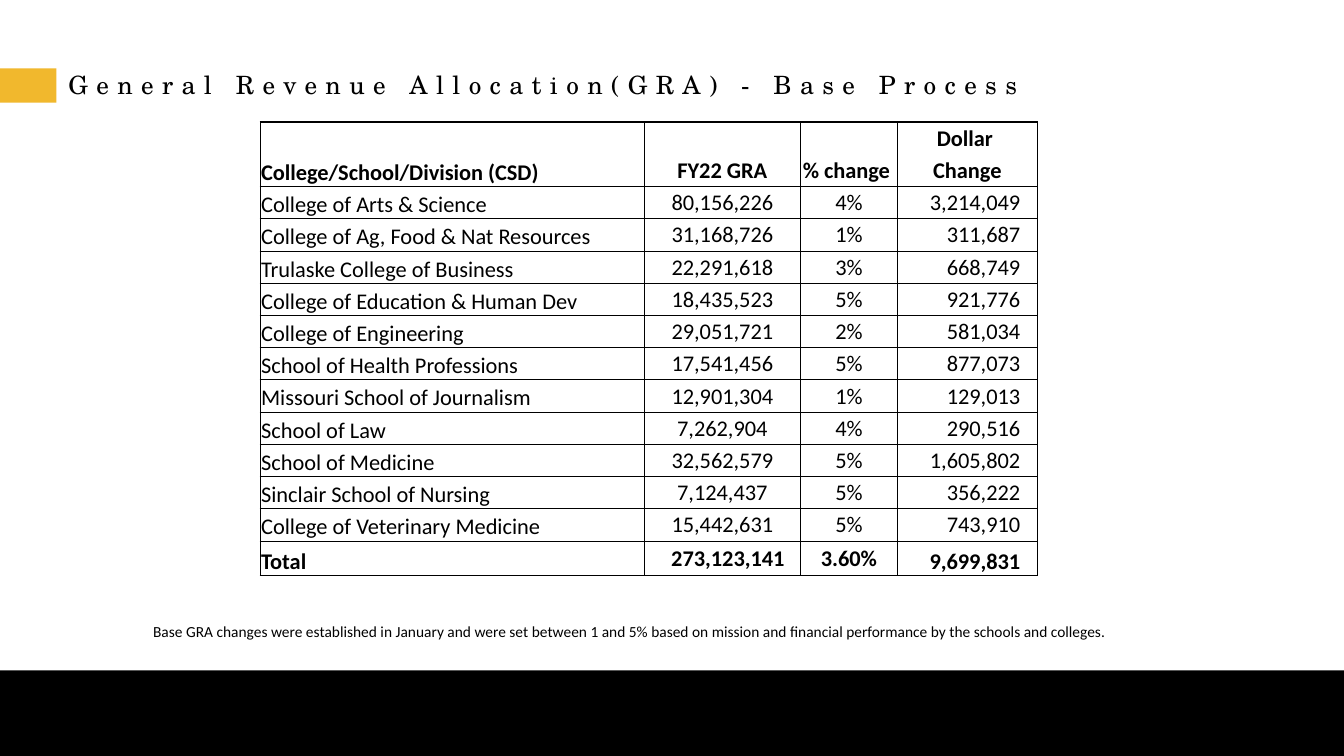
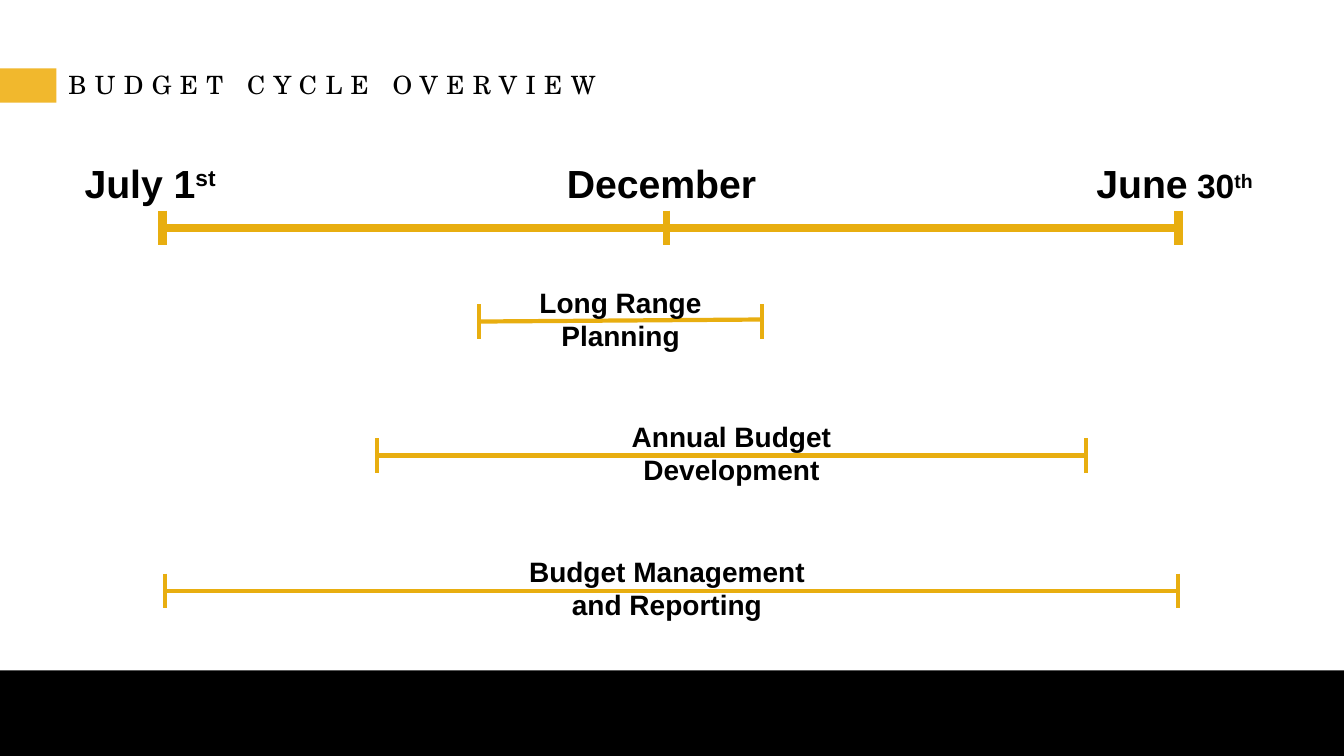
from lxml.etree import SubElement
from pptx import Presentation
from pptx.dml.color import RGBColor
from pptx.enum.shapes import MSO_CONNECTOR, MSO_SHAPE
from pptx.enum.text import MSO_ANCHOR, PP_ALIGN
from pptx.oxml import parse_xml
from pptx.oxml.ns import nsdecls, qn
from pptx.util import Inches, Pt

BLACK = "000000"
GOLD = "F1B82D"
LINE_GOLD = "E8AE10"
TITLE_FONT = "TeX Gyre Schola"
TABLE_FONT = "Calibri"
LABEL_FONT = "Arial"

COLUMNS = [3.81, 1.55, 0.96, 1.39]
ROWS = [
    ("", "", "", "Dollar"),
    ("College/School/Division (CSD)", "FY22 GRA", "% change", "Change"),
    ("College of Arts & Science", "80,156,226", "4%", "3,214,049"),
    ("College of Ag, Food & Nat Resources", "31,168,726", "1%", "311,687"),
    ("Trulaske College of Business", "22,291,618", "3%", "668,749"),
    ("College of Education & Human Dev", "18,435,523", "5%", "921,776"),
    ("College of Engineering", "29,051,721", "2%", "581,034"),
    ("School of Health Professions", "17,541,456", "5%", "877,073"),
    ("Missouri School of Journalism", "12,901,304", "1%", "129,013"),
    ("School of Law", "7,262,904", "4%", "290,516"),
    ("School of Medicine", "32,562,579", "5%", "1,605,802"),
    ("Sinclair School of Nursing", "7,124,437", "5%", "356,222"),
    ("College of Veterinary Medicine", "15,442,631", "5%", "743,910"),
    ("Total", "273,123,141", "3.60%", "9,699,831"),
]
HEADER_ROWS = 2


def color(value):
    return RGBColor.from_string(value)


def write(para, text, size=20, font=LABEL_FONT, bold=False, spacing=0, raised=False):
    span = para.add_run()
    span.text = text
    span.font.size = Pt(size)
    span.font.name = font
    span.font.bold = bold
    span.font.color.rgb = color(BLACK)
    properties = span.font._element
    if spacing:
        properties.set("spc", str(spacing * 100))
    if raised:
        properties.set("baseline", "30000")
    return span


def set_borders(cell, widths):
    properties = cell._tc.get_or_add_tcPr()
    for index, (side, width) in enumerate(zip("LRTB", widths)):
        fill = f'<a:solidFill><a:srgbClr val="{BLACK}"/></a:solidFill>' if width else "<a:noFill/>"
        border = parse_xml(f'<a:ln{side} {nsdecls("a")} w="{int(Pt(width))}">{fill}</a:ln{side}>')
        properties.insert(index, border)


class Slides:
    def __init__(self):
        self.deck = Presentation()
        self.deck.slide_width = Inches(13.33)
        self.deck.slide_height = Inches(7.5)
        self.page = None

    def new_page(self, title):
        self.page = self.deck.slides.add_slide(self.deck.slide_layouts[6])
        self.band(0, 6.65, 13.33, 0.85, BLACK)
        self.band(0, 0.68, 0.56, 0.34, GOLD)
        para, = self.text_box(0.58, 0.69, 12.14, 0.34, anchor=MSO_ANCHOR.MIDDLE)
        para.line_spacing = 0.9
        write(para, title, size=18, font=TITLE_FONT, spacing=6)

    def band(self, left, top, width, height, fill):
        shape = self.page.shapes.add_shape(
            MSO_SHAPE.RECTANGLE, Inches(left), Inches(top), Inches(width), Inches(height))
        shape.shadow.inherit = False
        shape.fill.solid()
        shape.fill.fore_color.rgb = color(fill)
        shape.line.fill.background()

    def text_box(self, left, top, width, height, align=PP_ALIGN.LEFT,
                 anchor=MSO_ANCHOR.TOP, count=1):
        frame = self.page.shapes.add_textbox(
            Inches(left), Inches(top), Inches(width), Inches(height)).text_frame
        frame.word_wrap = True
        frame.vertical_anchor = anchor
        for _ in range(count - 1):
            frame.add_paragraph()
        for para in frame.paragraphs:
            para.alignment = align
        return frame.paragraphs

    def line(self, start, end, width):
        connector = self.page.shapes.add_connector(
            MSO_CONNECTOR.STRAIGHT, *(Inches(value) for value in start + end))
        connector.line.color.rgb = color(LINE_GOLD)
        connector.line.width = Pt(width)
        SubElement(connector._element.spPr, qn("a:effectLst"))

    def tick(self, x, y, width):
        self.line((x, y - 0.17), (x, y + 0.17), width)

    def period(self, left, right, y, labels, label_left, label_width, rise=0):
        self.line((left, y), (right, y - rise), 3)
        for x in (left, right):
            self.tick(x, y, 3)
        paragraphs = self.text_box(label_left, y - 0.41, label_width, 0.77,
                                   PP_ALIGN.CENTER, count=len(labels))
        for para, label in zip(paragraphs, labels):
            write(para, label, bold=True)

    def milestone(self, left, width, parts, align=PP_ALIGN.CENTER):
        para, = self.text_box(left, 1.53, width, 0.57, align)
        for text, size, raised in parts:
            write(para, text, size=size, bold=True, raised=raised)

    def table(self, left, top):
        last_row, last_column = len(ROWS) - 1, len(COLUMNS) - 1
        table = self.page.shapes.add_table(
            len(ROWS), len(COLUMNS), Inches(left), Inches(top),
            Inches(sum(COLUMNS)), Inches(0.32 * last_row + 0.34)).table
        table.first_row = table.horz_banding = False
        for column, width in zip(table.columns, COLUMNS):
            column.width = Inches(width)
        for r, values in enumerate(ROWS):
            table.rows[r].height = Inches(0.34 if r == last_row else 0.32)
            for c, value in enumerate(values):
                cell = table.cell(r, c)
                cell.fill.background()
                cell.margin_left = cell.margin_right = cell.margin_top = Inches(0.01)
                cell.margin_bottom = 0
                low = c == 0 or (r == last_row and c == last_column)
                cell.vertical_anchor = MSO_ANCHOR.BOTTOM if low else MSO_ANCHOR.MIDDLE
                para = cell.text_frame.paragraphs[0]
                para.alignment = PP_ALIGN.LEFT if c == 0 else PP_ALIGN.CENTER
                if c == last_column and r >= HEADER_ROWS:
                    para.alignment = PP_ALIGN.RIGHT
                    cell.margin_right = Inches(0.17)
                if value in ("Dollar", "% change"):
                    cell.margin_right = Inches(0.06)
                if c == 1 and r == last_row:
                    cell.margin_left = Inches(0.12)
                if value:
                    write(para, value, size=16, font=TABLE_FONT,
                          bold=r < HEADER_ROWS or r == last_row)
                set_borders(cell, (
                    1 if c == 0 else 0.5,
                    1 if c == last_column else 0.5,
                    {0: 1, 1: 0}.get(r, 0.5),
                    {0: 0, last_row: 1}.get(r, 0.5)))


def main():
    slides = Slides()

    slides.new_page("General Revenue Allocation(GRA) - Base Process")
    slides.table(2.58, 1.21)
    note, = slides.text_box(1.42, 6.12, 10.96, 0.29)
    write(note, "Base GRA changes were established in January and were set between 1 and 5% "
                "based on mission and financial performance by the schools and colleges.",
          size=11, font=TABLE_FONT)

    slides.new_page("BUDGET CYCLE OVERVIEW")
    slides.line((1.65, 2.26), (11.66, 2.26), 6)
    for x, width in ((1.61, 6), (6.61, 5), (11.69, 6)):
        slides.tick(x, 2.26, width)
    slides.milestone(0.74, 1.76, [("July 1", 28, False), ("st", 28, True)], PP_ALIGN.LEFT)
    slides.milestone(5.3, 2.52, [("December", 28, False)])
    slides.milestone(10.35, 2.6, [("June", 28, False), (" 30", 24, False), ("th", 24, True)])
    slides.period(4.75, 7.56, 3.19, ["Long Range Planning"], 5.19, 1.93, rise=0.02)
    slides.period(3.74, 10.77, 4.52, ["Annual Budget", "Development"], 5.99, 2.53)
    slides.period(1.64, 11.68, 5.86, ["Budget Management", "and Reporting"], 4.97, 3.29)

    slides.deck.save("out.pptx")


if __name__ == "__main__":
    main()
